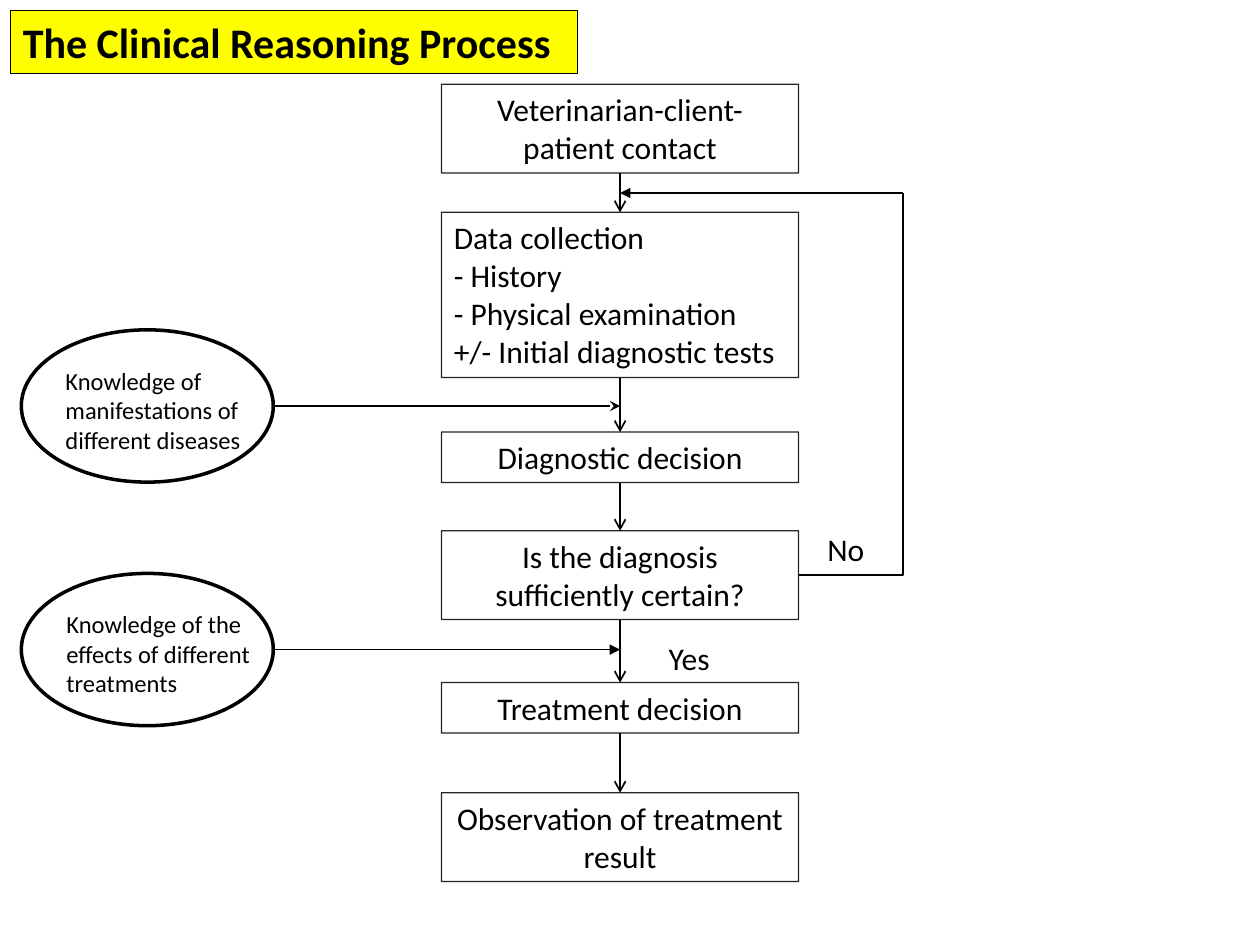
from lxml import etree
from pptx import Presentation
from pptx.dml.color import RGBColor
from pptx.enum import shapes, text
from pptx.oxml.ns import qn
from pptx.util import Cm, Pt

COLOURS = {"ink": "000000", "title": "FFFF00"}
FONT = "Calibri"

# Content: (top, height, alignment, paragraphs) for each step of the flow
STEPS = [
    (1.7, 1.79, "CENTER", ["Veterinarian-client-patient contact"]),
    (4.28, 3.33, "LEFT", ["Data collection", "- History", "- Physical examination",
                          "+/- Initial diagnostic tests"]),
    (8.71, 1.02, "CENTER", ["Diagnostic decision"]),
    (10.7, 1.79, "CENTER", ["Is the diagnosis sufficiently certain?"]),
    (13.76, 1.02, "CENTER", ["Treatment decision"]),
    (15.98, 1.79, "CENTER", ["Observation of treatment result"]),
]
# (ellipse top, text left, text, arrowhead)
KNOWLEDGE = [
    (6.65, 1.07, "Knowledge of manifestations of different diseases", "stealth"),
    (11.56, 1.09, "Knowledge of the effects of different treatments", "triangle"),
]
ANSWERS = [("Yes", 13.23, 12.75), ("No", 16.43, 10.57)]
TITLE = "The Clinical Reasoning Process"

STEP_LEFT, STEP_WIDTH = 8.9, 7.2
CENTRE = STEP_LEFT + STEP_WIDTH / 2
STEP_RIGHT = STEP_LEFT + STEP_WIDTH
OVAL_LEFT, OVAL_WIDTH, OVAL_HEIGHT = 0.43, 5.08, 3.07
LOOP_X, LOOP_Y = 18.21, 3.89

presentation = Presentation()
presentation.slide_width, presentation.slide_height = Cm(25.4), Cm(19.05)
slide = presentation.slides.add_slide(presentation.slide_layouts[6])


def colour(name):
    return RGBColor.from_string(COLOURS[name])


def write(shape, lines, size, align="LEFT", bold=False):
    frame = shape.text_frame
    settings = {"word_wrap": True, "vertical_anchor": text.MSO_ANCHOR.TOP,
                "auto_size": text.MSO_AUTO_SIZE.SHAPE_TO_FIT_TEXT}
    for name, value in settings.items():
        setattr(frame, name, value)
    for index, line in enumerate(lines):
        paragraph = frame.paragraphs[0] if index == 0 else frame.add_paragraph()
        paragraph.alignment = getattr(text.PP_ALIGN, align)
        run = paragraph.add_run()
        run.text = line
        for name, value in {"name": FONT, "size": Pt(size), "bold": bold}.items():
            setattr(run.font, name, value)
        run.font.color.rgb = colour("ink")


def add_outline(kind, left, top, width, height, weight, fill=None):
    shape = slide.shapes.add_shape(kind, Cm(left), Cm(top), Cm(width), Cm(height))
    shape.shadow.inherit = False
    if fill:
        shape.fill.solid()
        shape.fill.fore_color.rgb = colour(fill)
    else:
        shape.fill.background()
    shape.line.color.rgb = colour("ink")
    shape.line.width = Pt(weight)
    return shape


def add_label(left, top, width, height, label, size):
    box = slide.shapes.add_textbox(Cm(left), Cm(top), Cm(width), Cm(height))
    write(box, [label], size)


def add_line(start, end, head=None, kind="STRAIGHT"):
    connector = slide.shapes.add_connector(
        getattr(shapes.MSO_CONNECTOR, kind), *[Cm(value) for value in start + end])
    connector.line.color.rgb = colour("ink")
    connector.line.width = Pt(1)
    if head:
        etree.SubElement(connector.line._get_or_add_ln(), qn("a:tailEnd"), type=head)
    etree.SubElement(connector._element.spPr, qn("a:effectLst"))
    return connector


# Flow steps, with slightly transparent borders
boxes = []
for top, height, align, lines in STEPS:
    box = add_outline(shapes.MSO_SHAPE.RECTANGLE, STEP_LEFT, top, STEP_WIDTH, height, 0.75)
    border = box.line._get_or_add_ln().find(".//" + qn("a:srgbClr"))
    etree.SubElement(border, qn("a:alpha"), val="86000")
    write(box, lines, 18, align)
    boxes.append(box)

# Arrows from each step to the next
for (top, height, *_), following, upper, lower in zip(STEPS, STEPS[1:], boxes, boxes[1:]):
    arrow = add_line((CENTRE, top + height), (CENTRE, following[0]), "arrow")
    arrow.begin_connect(upper, 2)
    arrow.end_connect(lower, 0)

# Knowledge ellipses and their arrows into the flow
for top, text_left, label, head in KNOWLEDGE:
    add_outline(shapes.MSO_SHAPE.OVAL, OVAL_LEFT, top, OVAL_WIDTH, OVAL_HEIGHT, 2)
    add_label(text_left, top + 0.6, 4.24, 2.06, label, 14)
    middle = top + OVAL_HEIGHT / 2
    add_line((OVAL_LEFT + OVAL_WIDTH, middle), (CENTRE, middle), head)

# Loop back to data collection when the diagnosis is uncertain
question_middle = STEPS[3][0] + STEPS[3][1] / 2
elbow = add_line((STEP_RIGHT, question_middle), (LOOP_X, LOOP_Y), kind="ELBOW")
elbow._element.spPr.find(qn("a:prstGeom")).set("prst", "bentConnector2")
add_line((LOOP_X, LOOP_Y), (CENTRE, LOOP_Y), "triangle")

# Answers
for label, left, top in ANSWERS:
    add_label(left, top, 1.7, 1.02, label, 18)

# Title
banner = add_outline(shapes.MSO_SHAPE.RECTANGLE, 0.21, 0.21, 11.43, 1.28, 0.75, "title")
write(banner, [TITLE], 24, bold=True)

presentation.save("out.pptx")
